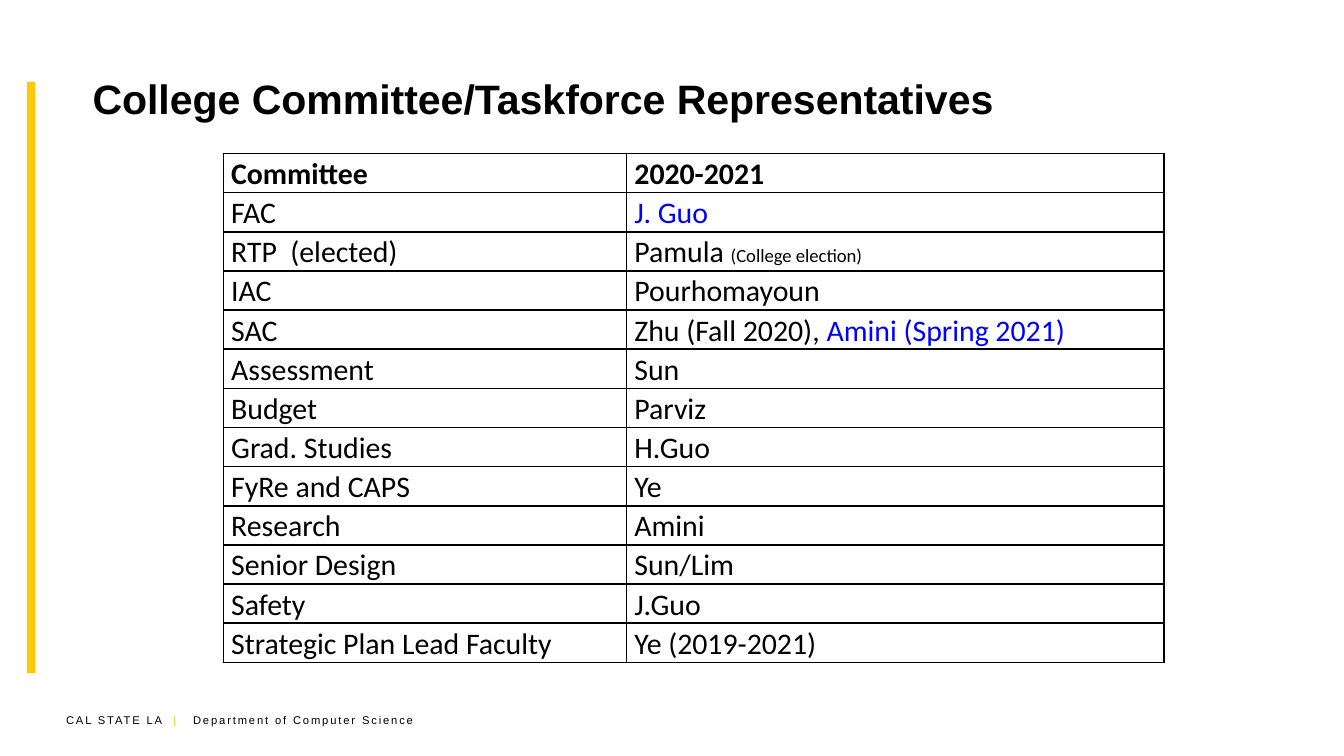
import pptx
import pptx.dml.color
import pptx.enum.shapes
import pptx.enum.text
import pptx.oxml
import pptx.oxml.ns
import pptx.util
from lxml import etree
from pptx.util import Cm

BLACK = pptx.dml.color.RGBColor(0x00, 0x00, 0x00)
BLUE = pptx.dml.color.RGBColor(0x00, 0x00, 0xFF)
GOLD = pptx.dml.color.RGBColor(0xFC, 0xC9, 0x0A)
qualified = pptx.oxml.ns.qn


def add_run(paragraph, text, color=BLACK, **font_format):
    run = paragraph.add_run()
    run.text = text
    run.font.color.rgb = color
    for name, value in font_format.items():
        setattr(run.font, name, value)
    return run


def add_text_box(left, top, width, height, anchor):
    frame = slide.shapes.add_textbox(Cm(left), Cm(top), Cm(width), Cm(height)).text_frame
    frame.word_wrap = True
    frame.vertical_anchor = anchor
    return frame.paragraphs[0]


presentation = pptx.Presentation()
presentation.slide_width = Cm(25.4)
presentation.slide_height = Cm(14.29)
slide = presentation.slides.add_slide(presentation.slide_layouts[6])

# Footer, with a tab stop before the department name
paragraph = add_text_box(1, 13.36, 7.4, 0.5, pptx.enum.text.MSO_ANCHOR.TOP)
tab_list = etree.SubElement(paragraph._p.get_or_add_pPr(), qualified("a:tabLst"))
etree.SubElement(tab_list, qualified("a:tab"), pos=str(Cm(2.4)), algn="l")
footer_format = {"size": pptx.util.Pt(6), "name": "Arial"}
for text, color in [("CAL STATE LA ", BLACK), (" |\t", GOLD),
                    ("Department of Computer Science", BLACK)]:
    run = add_run(paragraph, text, color, **footer_format)
    run.font._element.set("spc", "100")

# Gold bar at the left edge
bar = slide.shapes.add_shape(pptx.enum.shapes.MSO_SHAPE.RECTANGLE,
                             Cm(0.51), Cm(1.55), Cm(0.16), Cm(11.18))
bar.shadow.inherit = False
bar.fill.solid()
bar.fill.fore_color.rgb = GOLD
bar.line.fill.background()

# Title
paragraph = add_text_box(1.5, 0.66, 22.6, 2.4, pptx.enum.text.MSO_ANCHOR.MIDDLE)
add_run(paragraph, "College Committee/Taskforce Representatives",
        size=pptx.util.Pt(22), name="Arial", bold=True)

# Committee table: each cell is a list of (text, color, size) runs
rows = [
    ("Committee", [("2020-2021", BLACK, 16)]),
    ("FAC", [("J. Guo", BLUE, 16)]),
    ("RTP  (elected)", [("Pamula ", BLACK, 16), ("(College election)", BLACK, 10)]),
    ("IAC", [("Pourhomayoun", BLACK, 16)]),
    ("SAC", [("Zhu (Fall 2020), ", BLACK, 16), ("Amini (Spring 2021)", BLUE, 16)]),
    ("Assessment", [("Sun", BLACK, 16)]),
    ("Budget", [("Parviz", BLACK, 16)]),
    ("Grad. Studies", [("H.Guo", BLACK, 16)]),
    ("FyRe and CAPS", [("Ye", BLACK, 16)]),
    ("Research", [("Amini", BLACK, 16)]),
    ("Senior Design", [("Sun/Lim", BLACK, 16)]),
    ("Safety", [("J.Guo", BLACK, 16)]),
    ("Strategic Plan Lead Faculty", [("Ye (2019-2021)", BLACK, 16)]),
]
row_height = 0.74
table = slide.shapes.add_table(len(rows), 2, Cm(4.22), Cm(2.9), Cm(17.78),
                               Cm(row_height * len(rows))).table
table.columns[0].width = Cm(7.62)
table.columns[1].width = Cm(10.16)
cell_format = {"margin_left": Cm(0.15), "margin_right": Cm(0.15),
               "margin_top": 0, "margin_bottom": 0}

for row_index, (committee, members) in enumerate(rows):
    table.rows[row_index].height = Cm(row_height)
    for column_index, runs in enumerate([[(committee, BLACK, 16)], members]):
        cell = table.cell(row_index, column_index)
        for name, value in cell_format.items():
            setattr(cell, name, value)
        paragraph = cell.text_frame.paragraphs[0]
        paragraph.line_spacing = 1.07
        for text, color, size in runs:
            add_run(paragraph, text, color, size=pptx.util.Pt(size),
                    name="Calibri", bold=row_index == 0)

        # Borders come before the fill in the cell properties
        properties = cell._tc.get_or_add_tcPr()
        for side in ("a:lnL", "a:lnR", "a:lnT", "a:lnB"):
            border = etree.SubElement(properties, qualified(side), w=str(pptx.util.Pt(1)))
            border_fill = etree.SubElement(border, qualified("a:solidFill"))
            etree.SubElement(border_fill, qualified("a:srgbClr"), val=str(BLACK))
        cell.fill.background()

presentation.save("out.pptx")
